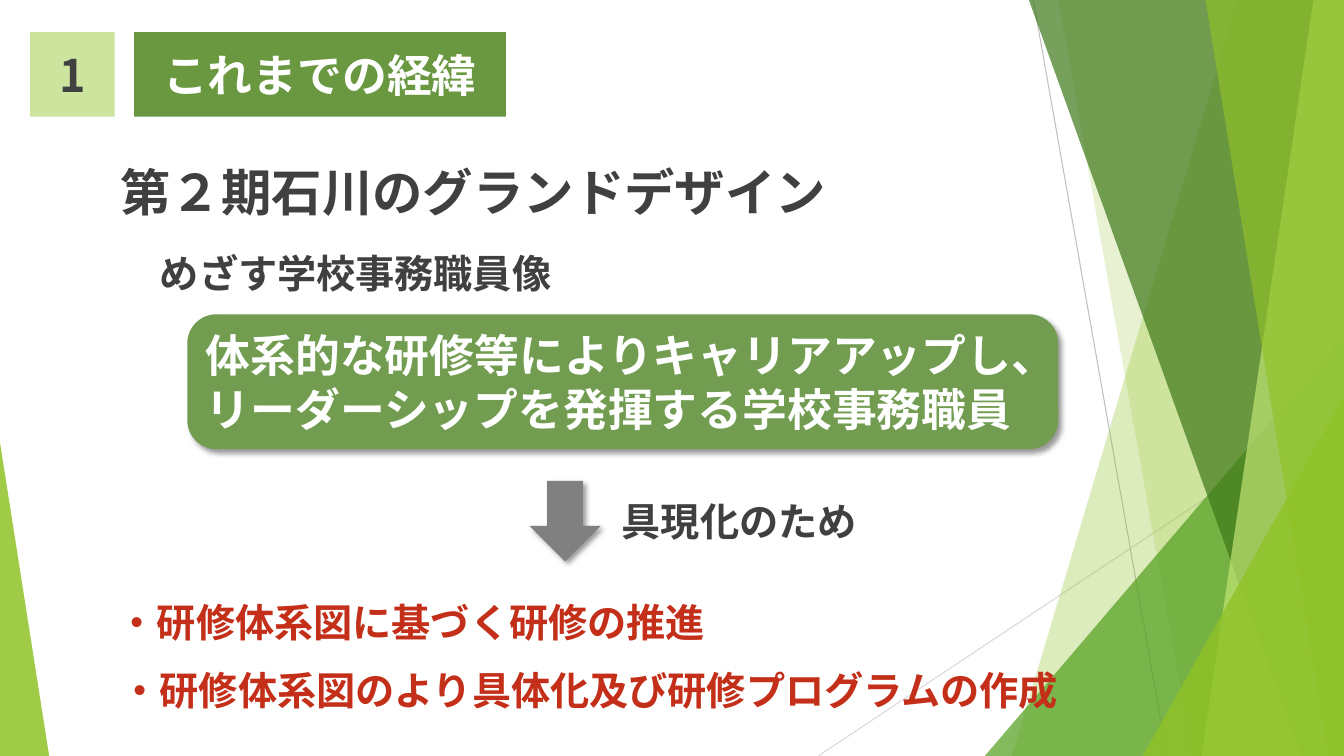
"""Build the slide on the background to the second grand design."""
from dataclasses import dataclass

from lxml.etree import SubElement
from pptx import Presentation
from pptx.dml.color import RGBColor
from pptx.enum.lang import MSO_LANGUAGE_ID as Lang
from pptx.enum.shapes import MSO_CONNECTOR as Link, MSO_SHAPE as Preset
from pptx.enum.text import MSO_ANCHOR as Anchor, MSO_AUTO_SIZE as AutoSize, PP_ALIGN as Align
from pptx.oxml.ns import qn
from pptx.util import Cm, Pt

WIDTH, HEIGHT = 33.87, 19.05


@dataclass(frozen=True)
class Theme:
    font: str = "Noto Sans CJK JP"
    ink: str = "404040"
    white: str = "FFFFFF"
    accent: str = "C42F1A"
    title_fill: str = "699841"
    number_fill: str = "CDE49F"
    goal_fill: str = "729D51"
    arrow_fill: str = "808080"
    shadow: str = "000000"
    lime: str = "90C226"
    pale_lime: str = "C0E474"
    leaf: str = "54A021"
    forest: str = "3F7819"
    steep_line: str = "BFBFBF"
    shallow_line: str = "D9D9D9"
    heading: int = 36
    label: int = 32
    body: int = 28


THEME = Theme()


def paint(shape, color, opacity=100):
    shape.fill.solid()
    shape.fill.fore_color.rgb = RGBColor.from_string(color)
    if opacity < 100:
        tint = shape._element.spPr.find(".//" + qn("a:srgbClr"))
        SubElement(tint, qn("a:alpha"), val=str(opacity * 1000))
    shape.line.fill.background()


def write(shape, text, size=THEME.body, color=THEME.ink, align=Align.LEFT, anchor=Anchor.TOP):
    frame = shape.text_frame
    frame.word_wrap = True
    frame.auto_size = AutoSize.NONE
    frame.vertical_anchor = anchor
    paragraph = frame.paragraphs[0]
    paragraph.alignment = align
    paragraph.line_spacing = Pt(size * 1.2)
    run = paragraph.add_run()
    run.text = text
    run.font.name = THEME.font
    run.font.size = Pt(size)
    run.font.bold = True
    run.font.color.rgb = RGBColor.from_string(color)
    run.font.language_id = Lang.JAPANESE
    SubElement(run.font._element, qn("a:ea"), typeface=THEME.font)


def add_block(slide, preset, box, color, opacity=100, adjust=None):
    block = slide.shapes.add_shape(preset, *map(Cm, box))
    block.shadow.inherit = False
    if adjust is not None:
        block.adjustments[0] = adjust
    paint(block, color, opacity)
    return block


def add_band(slide, top_x, bottom_x, color, opacity):
    builder = slide.shapes.build_freeform(Cm(top_x), 0)
    corners = [(WIDTH, 0), (WIDTH, HEIGHT), (bottom_x, HEIGHT)]
    builder.add_line_segments([(Cm(x), Cm(y)) for x, y in corners])
    band = builder.convert_to_shape()
    band.shadow.inherit = False
    paint(band, color, opacity)


def add_ray(slide, ends, color):
    ray = slide.shapes.add_connector(Link.STRAIGHT, *map(Cm, ends))
    ray.line.color.rgb = RGBColor.from_string(color)
    ray.line.width = Pt(0.75)
    SubElement(ray._element.spPr, qn("a:effectLst"))


def add_text(slide, box, text, **style):
    write(slide.shapes.add_textbox(*map(Cm, box)), text, **style)


def cast_shadow(shape):
    effects = shape._element.spPr.find(qn("a:effectLst"))
    outer = SubElement(effects, qn("a:outerShdw"), blurRad=str(Pt(4)), dist=str(Pt(3)),
                       dir=str(45 * 60000), algn="tl", rotWithShape="0")
    tint = SubElement(outer, qn("a:srgbClr"), val=THEME.shadow)
    SubElement(tint, qn("a:alpha"), val="40000")


def add_facets(slide):
    triangle = Preset.ISOSCELES_TRIANGLE
    add_ray(slide, (26.04, 0, 29.41, HEIGHT), THEME.steep_line)
    add_ray(slide, (WIDTH, 10.24, 20.62, HEIGHT), THEME.shallow_line)
    add_band(slide, 31.19, 25.5, THEME.lime, 30)
    add_band(slide, 26.67, 30.05, THEME.lime, 20)
    add_block(slide, triangle, (24.82, 8.46, 9.05, 10.59), THEME.leaf, 72, adjust=1)
    add_band(slide, 25.93, 32.79, THEME.forest, 70)
    add_band(slide, 33.1, 30.28, THEME.pale_lime, 70)
    add_band(slide, 30.38, 33.48, THEME.lime, 65)
    add_block(slide, triangle, (28.8, 9.98, 5.07, 9.07), THEME.lime, 80, adjust=1)
    add_block(slide, triangle, (0, 11.15, 1.24, 7.9), THEME.lime, 85, adjust=0)


def add_header(slide, number, text):
    title = slide.shapes.title
    title.left, title.top, title.width, title.height = map(Cm, (3.38, 0.81, 9.37, 2.13))
    paint(title, THEME.title_fill)
    centred = dict(size=THEME.label, align=Align.CENTER, anchor=Anchor.MIDDLE)
    write(title, text, color=THEME.white, **centred)
    badge = add_block(slide, Preset.RECTANGLE, (0.76, 0.81, 2.13, 2.13), THEME.number_fill)
    write(badge, number, **centred)


def add_goal(slide, text):
    goal = add_block(slide, Preset.ROUNDED_RECTANGLE, (4.72, 7.92, 21.95, 3.4),
                     THEME.goal_fill, adjust=0.216)
    cast_shadow(goal)
    write(goal, text, size=THEME.label, color=THEME.white, anchor=Anchor.MIDDLE)


def main():
    deck = Presentation()
    deck.slide_width, deck.slide_height = Cm(WIDTH), Cm(HEIGHT)
    slide = deck.slides.add_slide(deck.slide_layouts[5])
    add_facets(slide)
    add_header(slide, "1", "これまでの経緯")
    add_text(slide, (2.79, 3.94, 21.95, 1.8), "第２期石川のグランドデザイン", size=THEME.heading)
    add_text(slide, (3.78, 6.15, 16.97, 1.45), "めざす学校事務職員像")
    add_goal(slide, "体系的な研修等によりキャリアアップし、リーダーシップを発揮する学校事務職員")
    arrow = add_block(slide, Preset.DOWN_ARROW, (13.34, 12.12, 1.8, 2.03), THEME.arrow_fill)
    cast_shadow(arrow)
    add_text(slide, (15.42, 12.42, 6.91, 1.45), "具現化のため")
    add_text(slide, (2.72, 14.96, 15.49, 1.45), "・研修体系図に基づく研修の推進", color=THEME.accent)
    add_text(slide, (2.79, 16.66, 24.64, 1.45),
             "・研修体系図のより具体化及び研修プログラムの作成", color=THEME.accent)
    deck.save("out.pptx")


if __name__ == "__main__":
    main()
